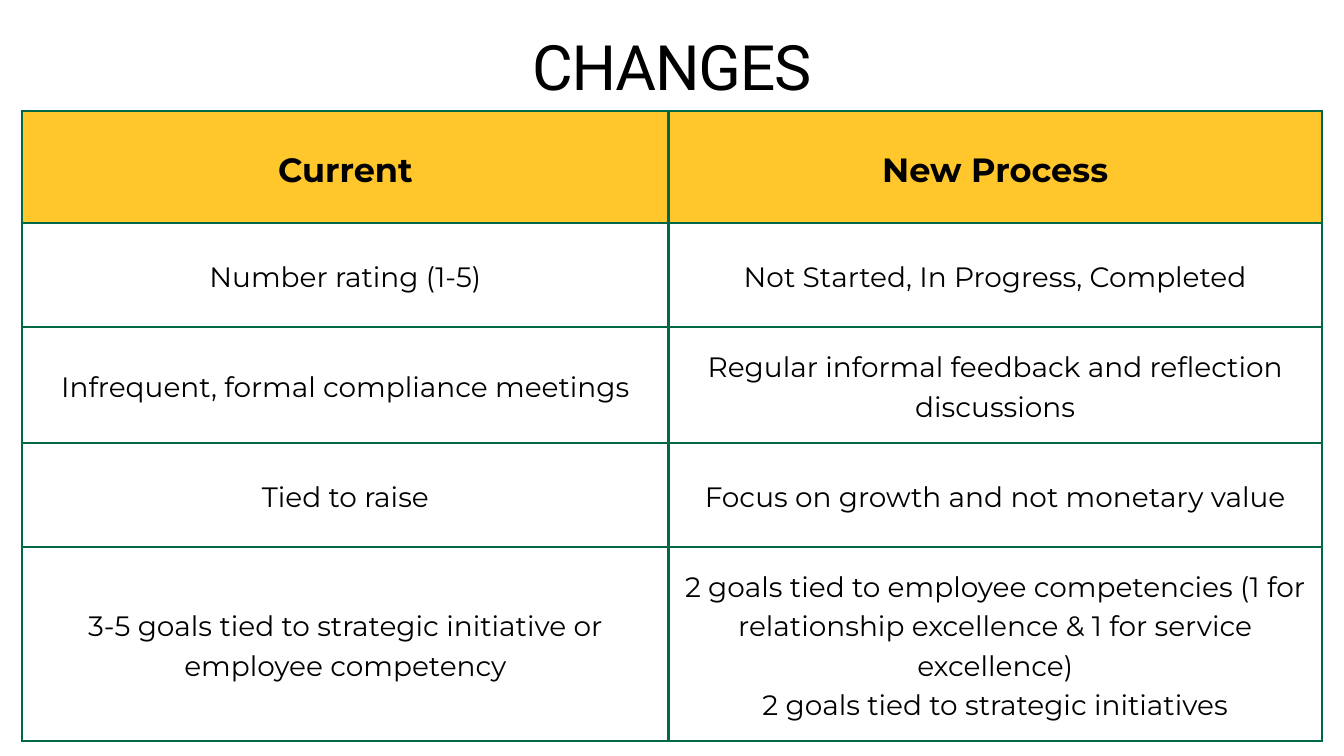
from lxml.etree import SubElement
from pptx import Presentation
from pptx.dml.color import RGBColor
from pptx.enum.text import MSO_ANCHOR, MSO_AUTO_SIZE, PP_ALIGN
from pptx.oxml.ns import qn
from pptx.util import Inches, Pt

TITLE = "CHANGES"
ROWS = [
    ("Current", "New Process"),
    ("Number rating (1-5)", "Not Started, In Progress, Completed"),
    ("Infrequent, formal compliance meetings",
     "Regular informal feedback and reflection discussions"),
    ("Tied to raise", "Focus on growth and not monetary value"),
    ("3-5 goals tied to strategic initiative or employee competency",
     "2 goals tied to employee competencies (1 for relationship excellence "
     "& 1 for service excellence)\n2 goals tied to strategic initiatives"),
]
COLUMN_WIDTHS = [9.62, 9.72]
ROW_HEIGHTS = [1.67, 1.55, 1.72, 1.55, 2.89]
CELL_MARGIN = 0.21
LINE_SPACING = 1.4  # line height as a multiple of the font size
BLACK, GREEN, GOLD = "000000", "006747", "FFC72C"


def color(hex_code):
    return RGBColor.from_string(hex_code)


def format_text(text_frame, font_name, size, bold=False):
    for paragraph in text_frame.paragraphs:
        paragraph.alignment = PP_ALIGN.CENTER
        paragraph.line_spacing = Pt(size * LINE_SPACING)
        paragraph.space_before = Pt(0)
        font = paragraph.font
        font.name, font.size, font.bold = font_name, Pt(size), bold
        font.color.rgb = color(BLACK)


def add_borders(cell, hex_code, width):
    properties = cell._tc.get_or_add_tcPr()
    for side in ("lnL", "lnR", "lnT", "lnB"):
        line = SubElement(properties, qn(f"a:{side}"), w=str(Pt(width)))
        fill = SubElement(line, qn("a:solidFill"))
        SubElement(fill, qn("a:srgbClr"), val=hex_code)


def add_title(slide):
    title = slide.shapes.title
    title.left, title.top = Inches(1.12), Inches(0.23)
    title.width, title.height = Inches(17.75), Inches(1.26)
    frame = title.text_frame
    frame.text = TITLE
    frame.word_wrap = True
    frame.auto_size = MSO_AUTO_SIZE.SHAPE_TO_FIT_TEXT
    frame.vertical_anchor = MSO_ANCHOR.TOP
    frame.margin_left = frame.margin_right = 0
    frame.margin_top = frame.margin_bottom = 0
    format_text(frame, "Roboto", 67)
    frame.paragraphs[0].runs[0].font._element.set("spc", "-130")


def add_comparison_table(slide):
    table = slide.shapes.add_table(
        len(ROWS), len(COLUMN_WIDTHS), Inches(0.33), Inches(1.65),
        Inches(sum(COLUMN_WIDTHS)), Inches(sum(ROW_HEIGHTS))).table
    table.first_row = table.horz_banding = False
    for column, width in zip(table.columns, COLUMN_WIDTHS):
        column.width = Inches(width)
    for row_index, (row, height, texts) in enumerate(
            zip(table.rows, ROW_HEIGHTS, ROWS)):
        row.height = Inches(height)
        is_header = row_index == 0
        for cell, text in zip(row.cells, texts):
            cell.text = text
            cell.vertical_anchor = MSO_ANCHOR.MIDDLE
            cell.margin_left = cell.margin_right = Inches(CELL_MARGIN)
            cell.margin_top = cell.margin_bottom = Inches(CELL_MARGIN)
            format_text(cell.text_frame, "Montserrat",
                        36 if is_header else 30, bold=is_header)
            add_borders(cell, GREEN, 3)
            if is_header:
                cell.fill.solid()
                cell.fill.fore_color.rgb = color(GOLD)
            else:
                cell.fill.background()


def main():
    presentation = Presentation()
    presentation.slide_width = Inches(20)
    presentation.slide_height = Inches(11.25)
    title_only = presentation.slide_layouts[5]
    slide = presentation.slides.add_slide(title_only)
    add_title(slide)
    add_comparison_table(slide)
    presentation.save("out.pptx")


if __name__ == "__main__":
    main()
